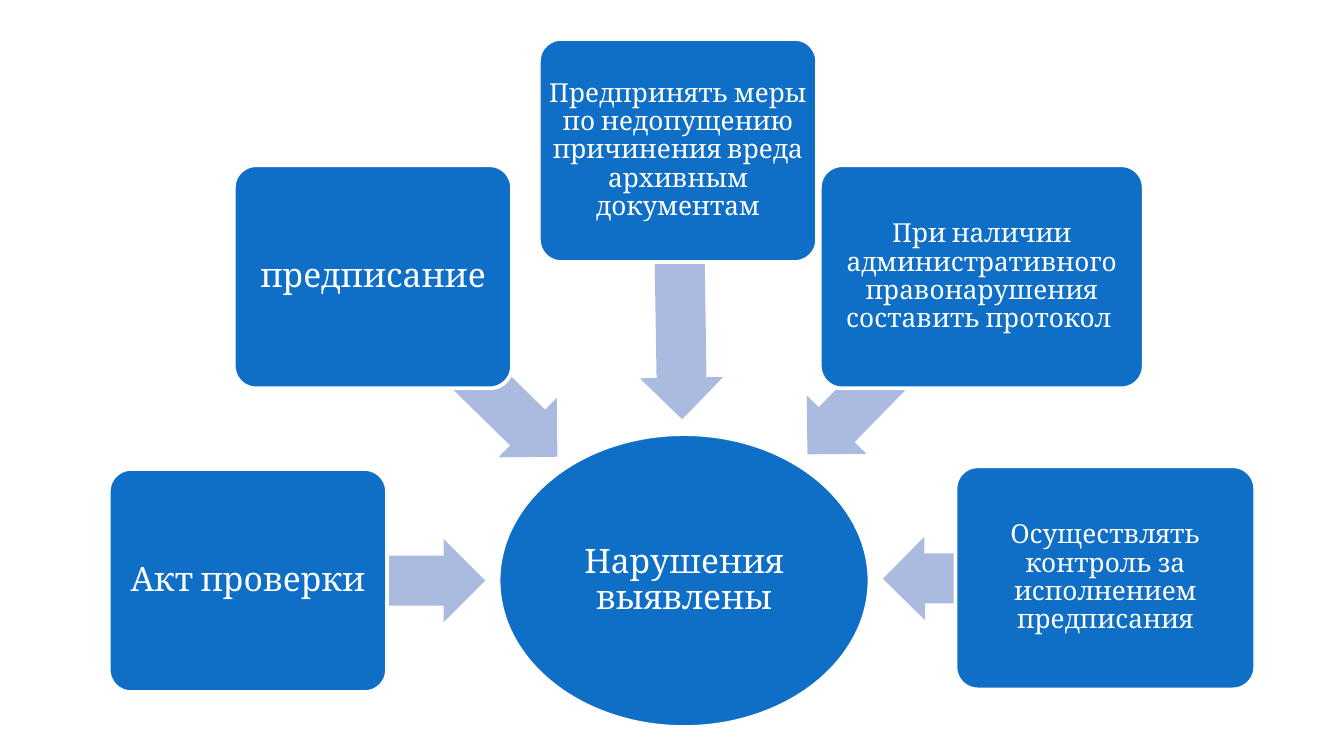
from dataclasses import dataclass

from pptx import Presentation
from pptx.dml.color import RGBColor
from pptx.enum.shapes import MSO_SHAPE
from pptx.enum.text import MSO_ANCHOR, PP_ALIGN
from pptx.shapes.autoshape import Shape
from pptx.slide import Slide
from pptx.util import Inches, Pt

ELLIPSE = MSO_SHAPE.OVAL
ROUNDED = MSO_SHAPE.ROUNDED_RECTANGLE
LEFT_ARROW = MSO_SHAPE.LEFT_ARROW
MIDDLE = MSO_ANCHOR.MIDDLE
CENTER = PP_ALIGN.CENTER


@dataclass(frozen=True)
class Theme:
    font: str = "Cambria"
    fill: RGBColor = RGBColor(0x0F, 0x6F, 0xC6)
    arrow: RGBColor = RGBColor(0xAB, 0xBB, 0xDF)
    white: RGBColor = RGBColor(0xFF, 0xFF, 0xFF)
    large: int = 18
    small: int = 14
    outline: int = 2


@dataclass(frozen=True)
class Arrow:
    left: float
    top: float
    width: float
    rotation: float


@dataclass(frozen=True)
class Step:
    text: str
    left: float
    top: float
    width: float
    size: int
    inset: float
    arrow: Arrow


THEME = Theme()
STEP_HEIGHT = 1.66
STEP_WIDTH = 2.07
ARROW_HEIGHT = 0.62

STEPS = [
    Step("Акт проверки", 0.81, 3.49, STEP_WIDTH, THEME.large, 0.04,
         Arrow(1.84, 4.01, 1.77, 180)),
    Step("предписание", 1.74, 1.23, STEP_WIDTH, THEME.large, 0.04,
         Arrow(2.51, 2.42, 1.91, 224.4)),
    Step("Предпринять меры по недопущению причинения вреда архивным документам",
         4.01, 0.29, STEP_WIDTH, THEME.small, 0.03,
         Arrow(4.06, 1.81, 2, 269.1)),
    Step("При наличии административного правонарушения составить протокол ",
         6.1, 1.23, 2.41, THEME.small, 0.03,
         Arrow(5.73, 2.41, 1.85, 314.4)),
    Step("Осуществлять контроль за исполнением предписания",
         7.11, 3.47, 2.23, THEME.small, 0.03,
         Arrow(6.57, 3.99, 1.66, 359.5)),
]


def add_filled(page: Slide, kind: MSO_SHAPE, left: float, top: float,
               width: float, height: float, color: RGBColor) -> Shape:
    shape = page.shapes.add_shape(
        kind, Inches(left), Inches(top), Inches(width), Inches(height))
    shape.shadow.inherit = False
    shape.fill.solid()
    shape.fill.fore_color.rgb = color
    return shape


def outline(shape: Shape) -> None:
    shape.line.color.rgb = THEME.white
    shape.line.width = Pt(THEME.outline)


def add_label(page: Slide, text: str, left: float, top: float, width: float,
              height: float, size: int, inset: float) -> None:
    box = page.shapes.add_textbox(
        Inches(left), Inches(top), Inches(width), Inches(height))
    frame = box.text_frame
    frame.word_wrap = True
    frame.vertical_anchor = MIDDLE
    frame.margin_left = frame.margin_right = Inches(inset)
    frame.margin_top = frame.margin_bottom = Inches(inset)
    frame.text = text
    para = frame.paragraphs[0]
    para.alignment = CENTER
    para.line_spacing = 0.9
    font = para.runs[0].font
    font.name = THEME.font
    font.size = Pt(size)
    font.color.rgb = THEME.white


def draw_center(page: Slide) -> None:
    area = (3.71, 3.23, 2.76, 2.18)
    outline(add_filled(page, ELLIPSE, *area, THEME.fill))
    label_inset = 0.4
    left, top, width, height = area
    add_label(page, "Нарушения выявлены", left + label_inset, top,
              width - 2 * label_inset, height, THEME.large, 0.01)


def draw_arrow(page: Slide, arrow: Arrow) -> None:
    shape = add_filled(page, LEFT_ARROW, arrow.left, arrow.top,
                       arrow.width, ARROW_HEIGHT, THEME.arrow)
    shape.line.fill.background()
    shape.adjustments[0] = 0.6
    shape.adjustments[1] = 0.5
    shape.rotation = arrow.rotation


def draw_step(page: Slide, step: Step) -> None:
    draw_arrow(page, step.arrow)
    area = (step.left, step.top, step.width, STEP_HEIGHT)
    shape = add_filled(page, ROUNDED, *area, THEME.fill)
    shape.adjustments[0] = 0.1
    outline(shape)
    add_label(page, step.text, *area, step.size, step.inset)


def main() -> None:
    deck = Presentation()
    deck.slide_width = Inches(10)
    deck.slide_height = Inches(10 * 9 / 16)
    page = deck.slides.add_slide(deck.slide_layouts[6])
    draw_center(page)
    for step in STEPS:
        draw_step(page, step)
    deck.save("out.pptx")


if __name__ == "__main__":
    main()
